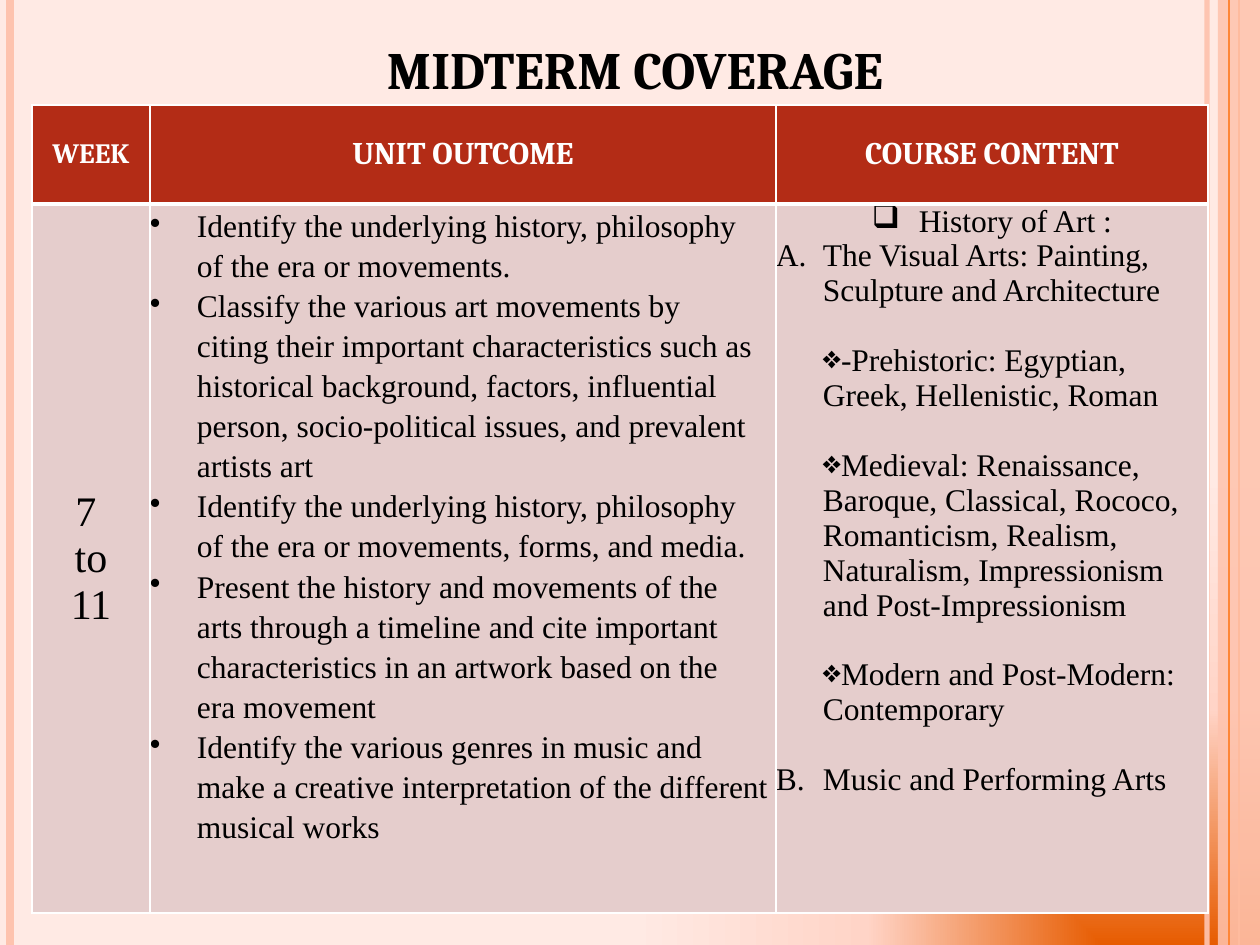
from copy import deepcopy
from typing import NamedTuple, Optional

from pptx import Presentation
from pptx.dml.color import RGBColor
from pptx.enum.shapes import MSO_CONNECTOR, MSO_SHAPE
from pptx.enum.text import MSO_ANCHOR as Anchor, PP_ALIGN as Align
from pptx.oxml import parse_xml
from pptx.oxml.ns import nsdecls, qn
from pptx.oxml.xmlchemy import OxmlElement
from pptx.util import Pt

EMU_PER_PX = 914400 / 126
SLIDE_WIDTH, SLIDE_HEIGHT = 1260, 945
COLUMN_WIDTHS = (118, 626, 432)
ROW_HEIGHTS = (99, 709)
HANGING = 47

BLACK = RGBColor(0x00, 0x00, 0x00)
WHITE = RGBColor(0xFF, 0xFF, 0xFF)
PEACH = RGBColor(0xFE, 0xC3, 0xAE)
ORANGE = RGBColor(0xFE, 0x86, 0x37)
BRICK = RGBColor(0xB3, 0x2C, 0x16)
ROSE = RGBColor(0xE5, 0xCD, 0xCC)
BACKGROUND_STOPS = (
    (0, RGBColor(0xE7, 0x5C, 0x01)),
    (50, RGBColor(0xFF, 0xD4, 0xC7)),
    (100, RGBColor(0xFF, 0xEA, 0xE4)),
)
HEADING_FONT, BODY_FONT = "Cambria", "Times New Roman"


class Stripe(NamedTuple):
    x: int
    color: RGBColor
    weight: float
    opacity: int = 100


class Item(NamedTuple):
    text: str
    bullet: str = ""
    letter: int = 0
    indent: int = -HANGING
    align: Optional[Align] = None
    line_spacing: float = 1.0
    space_before: int = 0


class Header(NamedTuple):
    text: str
    size: int


STRIPES_BELOW = (Stripe(1207, PEACH, 3, 93), Stripe(10, PEACH, 4.5), Stripe(1239, ORANGE, 1.5))
STRIPE_ABOVE = Stripe(1229, ORANGE, 0.75)
HEADERS = (Header("WEEK", 16), Header("UNIT OUTCOME", 18), Header("COURSE CONTENT", 18))
WEEKS = [Item(text, indent=0, align=Align.CENTER) for text in ("7 ", "to", "11")]
OUTCOMES = [
    Item(text, "•", line_spacing=1.15)
    for text in (
        "Identify the underlying history, philosophy\vof the era or movements.",
        "Classify the various art movements by\vciting their important characteristics such as "
        "historical background, factors, influential person, socio-political issues, "
        "and prevalent artists art",
        "Identify the underlying history, philosophy\vof the era or movements, forms, and media.",
        "Present the history and movements of the\varts through a timeline and cite important "
        "characteristics in an artwork based on the\vera movement",
        "Identify the various genres in music and make a creative interpretation "
        "of the different musical works",
    )
]
PERIODS = [
    Item(text, "❖", indent=0, space_before=20)
    for text in (
        "-Prehistoric: Egyptian, Greek, Hellenistic, Roman",
        "Medieval: Renaissance, Baroque, Classical, Rococo, Romanticism, Realism, "
        "Naturalism, Impressionism and Post-Impressionism",
        "Modern and Post-Modern: Contemporary",
    )
]
CONTENTS = [
    Item("History of Art :", "❑", align=Align.CENTER),
    Item("The Visual Arts: Painting, Sculpture and Architecture", letter=1),
    *PERIODS,
    Item("Music and Performing Arts", letter=2, space_before=20),
]


def px(length: int) -> int:
    return round(length * EMU_PER_PX)


def set_opacity(fill_parent, percent: int) -> None:
    alpha = OxmlElement("a:alpha")
    alpha.set("val", str(percent * 1000))
    next(fill_parent.iter(qn("a:srgbClr"))).append(alpha)


def paint_background(slide) -> None:
    """Fill the slide with a gradient that spreads from the bottom right corner."""
    slide.background.fill.gradient()
    old = next(slide.background._cSld.iter(qn("a:gradFill")))
    stops = "".join(
        f'<a:gs pos="{position * 1000}"><a:srgbClr val="{color}"/></a:gs>'
        for position, color in BACKGROUND_STOPS
    )
    gradient = parse_xml(
        f'<a:gradFill {nsdecls("a")} rotWithShape="1"><a:gsLst>{stops}</a:gsLst>'
        '<a:path path="rect"><a:fillToRect l="100000" t="100000"/></a:path></a:gradFill>'
    )
    old.getparent().replace(old, gradient)


def draw_stripe(slide, stripe: Stripe) -> None:
    line = slide.shapes.add_connector(
        MSO_CONNECTOR.STRAIGHT, px(stripe.x), 0, px(stripe.x), px(SLIDE_HEIGHT))
    line.line.color.rgb = stripe.color
    line.line.width = Pt(stripe.weight)
    properties = line._element.spPr
    if stripe.opacity < 100:
        set_opacity(properties, stripe.opacity)
    properties.append(OxmlElement("a:effectLst"))


def draw_band(slide) -> None:
    band = slide.shapes.add_shape(
        MSO_SHAPE.RECTANGLE, px(1218), 0, px(42), px(SLIDE_HEIGHT))
    band.shadow.inherit = False
    band.fill.solid()
    band.fill.fore_color.rgb = PEACH
    set_opacity(band._element.spPr, 87)
    band.line.fill.background()


def format_runs(paragraph, font: str, size: int, color: RGBColor, bold: bool) -> None:
    """Format every run, and give the line breaks the same properties."""
    for run in paragraph.runs:
        run.font.name, run.font.size, run.font.bold = font, Pt(size), bold
        run.font.color.rgb = color
    for line_break in paragraph._p.findall(qn("a:br")):
        line_break.append(deepcopy(paragraph.runs[0]._r.rPr))


def format_cell(cell, color: RGBColor, bottom_weight: int) -> None:
    properties = cell._tc.get_or_add_tcPr()
    for side, weight in (("L", 1), ("R", 1), ("T", 1), ("B", bottom_weight)):
        properties.append(parse_xml(
            f'<a:ln{side} {nsdecls("a")} w="{Pt(weight)}"><a:solidFill>'
            f'<a:srgbClr val="{WHITE}"/></a:solidFill></a:ln{side}>'))
    cell.fill.solid()
    cell.fill.fore_color.rgb = color


def fill_header(cell, header: Header) -> None:
    format_cell(cell, BRICK, 3)
    cell.vertical_anchor = Anchor.MIDDLE
    cell.text_frame.text = header.text
    paragraph = cell.text_frame.paragraphs[0]
    paragraph.alignment = Align.CENTER
    format_runs(paragraph, HEADING_FONT, header.size, WHITE, True)


def add_bullet(paragraph, item: Item) -> None:
    properties = paragraph._p.get_or_add_pPr()
    properties.set("marL", str(px(HANGING)))
    properties.set("indent", str(px(item.indent)))
    bullet = OxmlElement("a:buAutoNum" if item.letter else "a:buChar")
    if item.letter:
        bullet.set("type", "alphaUcPeriod")
        bullet.set("startAt", str(item.letter))
    else:
        bullet.set("char", item.bullet)
    properties.append(bullet)


def fill_body(cell, items: list[Item], size: int, anchor: Anchor) -> None:
    format_cell(cell, ROSE, 1)
    cell.margin_left = cell.margin_right = cell.margin_top = cell.margin_bottom = 0
    cell.vertical_anchor = anchor
    frame = cell.text_frame
    for index, item in enumerate(items):
        paragraph = frame.add_paragraph() if index else frame.paragraphs[0]
        paragraph.text = item.text
        paragraph.alignment = item.align
        paragraph.line_spacing = item.line_spacing
        paragraph.space_before = Pt(item.space_before)
        if item.bullet or item.letter:
            add_bullet(paragraph, item)
        format_runs(paragraph, BODY_FONT, size, BLACK, False)


def draw_title(slide) -> None:
    title = slide.shapes.title
    title.left, title.top, title.width, title.height = px(63), px(21), px(1144), px(95)
    title.text_frame.text = "MIDTERM COVERAGE"
    title.text_frame.vertical_anchor = Anchor.MIDDLE
    paragraph = title.text_frame.paragraphs[0]
    paragraph.alignment = Align.CENTER
    format_runs(paragraph, HEADING_FONT, 30, BLACK, True)


def draw_coverage_table(slide) -> None:
    table = slide.shapes.add_table(
        2, 3, px(32), px(105), px(sum(COLUMN_WIDTHS)), px(sum(ROW_HEIGHTS))).table
    for column, width in zip(table.columns, COLUMN_WIDTHS):
        column.width = px(width)
    for row, height in zip(table.rows, ROW_HEIGHTS):
        row.height = px(height)
    for index, header in enumerate(HEADERS):
        fill_header(table.cell(0, index), header)
    fill_body(table.cell(1, 0), WEEKS, 24, Anchor.MIDDLE)
    fill_body(table.cell(1, 1), OUTCOMES, 18, Anchor.TOP)
    fill_body(table.cell(1, 2), CONTENTS, 18, Anchor.TOP)


def main() -> None:
    presentation = Presentation()
    presentation.slide_width, presentation.slide_height = px(SLIDE_WIDTH), px(SLIDE_HEIGHT)
    slide = presentation.slides.add_slide(presentation.slide_layouts[5])
    paint_background(slide)
    for stripe in STRIPES_BELOW:
        draw_stripe(slide, stripe)
    draw_band(slide)
    draw_stripe(slide, STRIPE_ABOVE)
    draw_title(slide)
    draw_coverage_table(slide)
    presentation.save("out.pptx")


if __name__ == "__main__":
    main()
